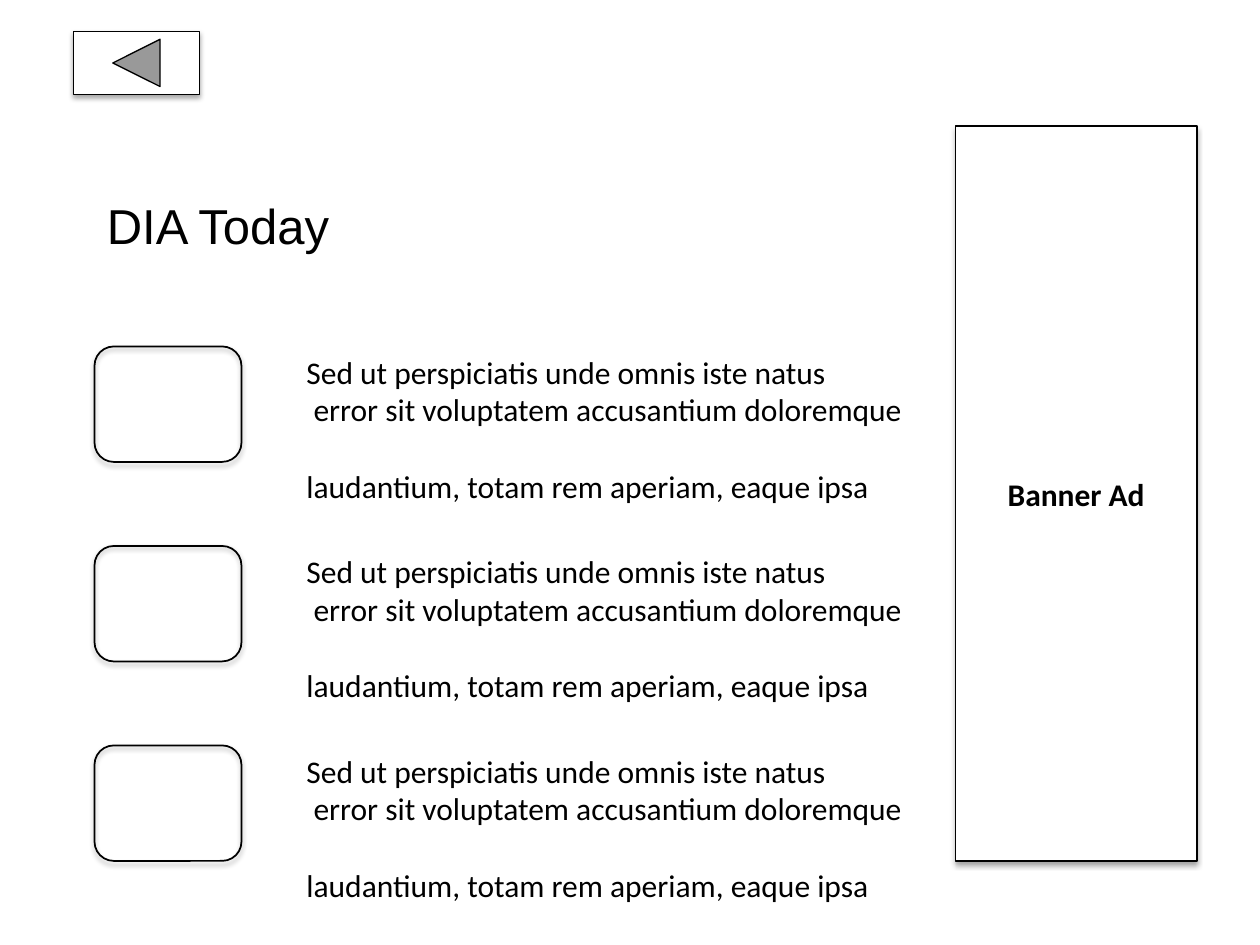
from lxml import etree
from pptx import Presentation
from pptx.dml.color import RGBColor
from pptx.enum.shapes import MSO_SHAPE
from pptx.enum.text import MSO_ANCHOR, PP_ALIGN
from pptx.oxml.ns import qn
from pptx.util import Emu, Pt

RECT = MSO_SHAPE.RECTANGLE
ROUND = MSO_SHAPE.ROUNDED_RECTANGLE
BACK = MSO_SHAPE.ACTION_BUTTON_BACK_OR_PREVIOUS
LEFT, CENTER = PP_ALIGN.LEFT, PP_ALIGN.CENTER
TOP, MIDDLE = MSO_ANCHOR.TOP, MSO_ANCHOR.MIDDLE

COLORS = {"ink": "000000", "paper": "FFFFFF"}
STORY = [
    "Sed ut perspiciatis unde omnis iste natus\v error sit voluptatem accusantium doloremque",
    "laudantium, totam rem aperiam, eaque ipsa",
]
ROWS, FIRST, PITCH = 3, 264, 152


def px(n):
    return Emu(n * 9525)


def color(name):
    return RGBColor.from_string(COLORS[name])


def add_shade(shape):
    shape.shadow.inherit = False
    effects = shape._element.spPr.find(qn("a:effectLst"))
    shade = etree.SubElement(effects, qn("a:outerShdw"), blurRad=str(Pt(3.1)),
                             dist=str(Pt(1.8)), dir="5400000", rotWithShape="0")
    tint = etree.SubElement(shade, qn("a:srgbClr"), val=COLORS["ink"])
    etree.SubElement(tint, qn("a:alpha"), val="35000")


def add_box(slide, kind, x, y, w, h, fill=None, line=0.75):
    box = slide.shapes.add_shape(kind, px(x), px(y), px(w), px(h))
    if fill:
        box.fill.solid()
        box.fill.fore_color.rgb = color(fill)
    else:
        box.fill.background()
    box.line.color.rgb = color("ink")
    box.line.width = Pt(line)
    add_shade(box)
    return box


def put_text(shape, paras, size=18, font="Calibri", bold=False,
             align=LEFT, anchor=TOP, gap=0):
    frame = shape.text_frame
    frame.word_wrap = True
    frame.vertical_anchor = anchor
    for i, text in enumerate(paras):
        para = frame.add_paragraph() if i else frame.paragraphs[0]
        para.text = text
        para.alignment = align
        para.space_before = Pt(gap if i else 0)
        for run in para.runs:
            run.font.size = Pt(size)
            run.font.name = font
            run.font.bold = bold
            run.font.color.rgb = color("ink")


def add_text(slide, x, y, w, h, paras, **style):
    box = slide.shapes.add_textbox(px(x), px(y), px(w), px(h))
    put_text(box, paras, **style)


def main():
    deck = Presentation()
    deck.slide_width, deck.slide_height = px(960), px(720)
    slide = deck.slides.add_slide(deck.slide_layouts[6])
    tops = [FIRST + i * PITCH for i in range(ROWS)]
    for y in tops:
        add_box(slide, ROUND, 72, y, 112, 88, line=1)
    add_box(slide, BACK, 56, 24, 96, 48, fill="paper")
    for y in tops:
        add_text(slide, 224, y, 478, 97, STORY, gap=22)
    add_text(slide, 72, 144, 190, 55, ["DIA Today"], size=28, font="Arial")
    banner = add_box(slide, RECT, 728, 96, 184, 560, fill="paper")
    put_text(banner, ["Banner Ad"], bold=True, align=CENTER, anchor=MIDDLE)
    deck.save("out.pptx")


if __name__ == "__main__":
    main()
